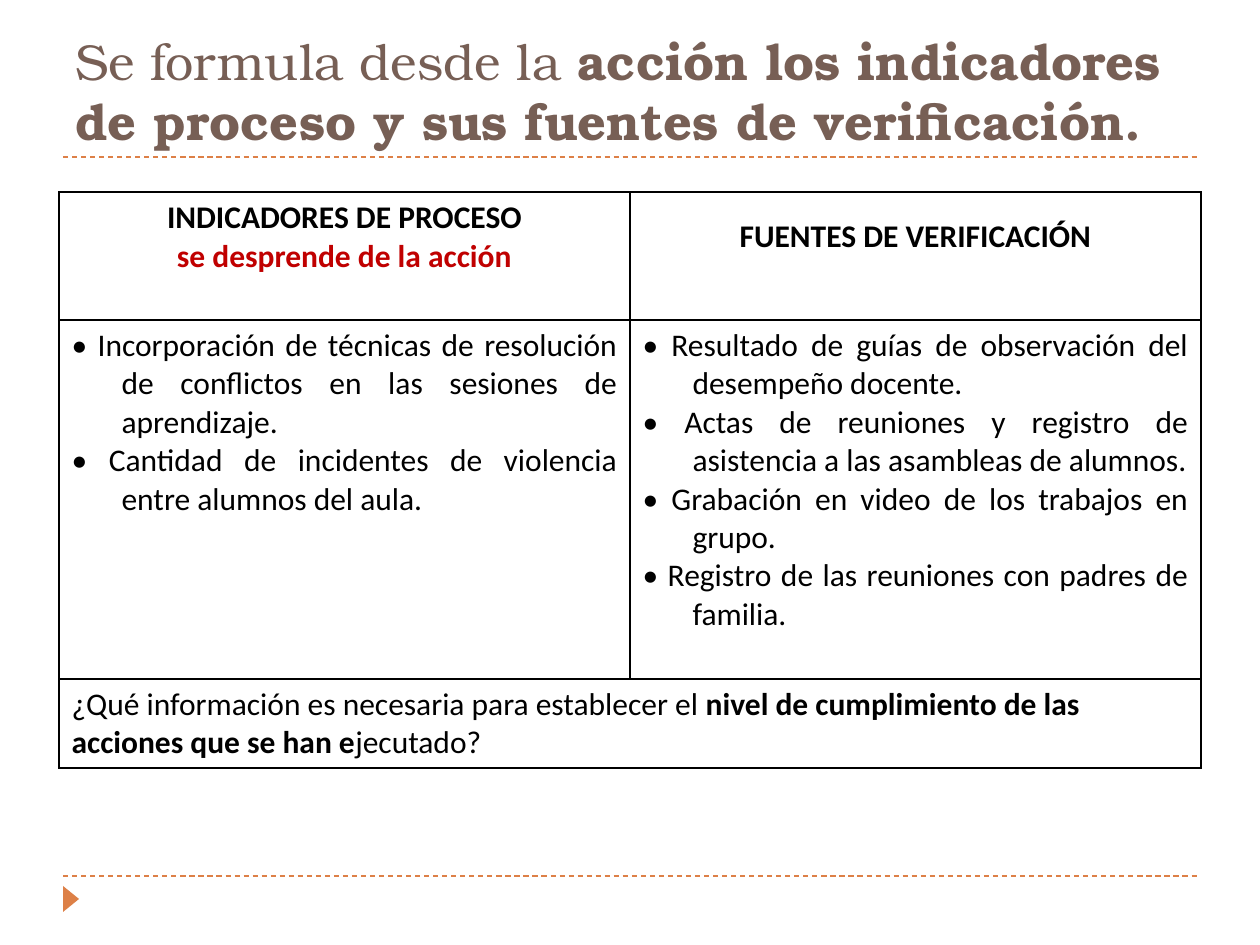
from dataclasses import dataclass

import pptx
import pptx.dml.color
import pptx.enum.dml
import pptx.enum.shapes
import pptx.enum.text
import pptx.oxml
import pptx.oxml.ns
import pptx.util
from lxml import etree

SCALE = 914400 / 126  # EMU in one px
ALIGN = pptx.enum.text.PP_ALIGN
ANCHOR = pptx.enum.text.MSO_ANCHOR
ACCENT, BROWN, BLACK, RED, WHITE = "DD8047", "775F55", "000000", "C00000", "FFFFFF"


@dataclass
class Run:
    text: str
    bold: bool = False


@dataclass
class Para:
    runs: list[Run]
    align: ALIGN = ALIGN.LEFT
    color: str = BLACK
    hang: int = 0
    font: str = "Calibri"
    size: float = 18


@dataclass
class Cell:
    row: int
    col: int
    paras: list[Para]
    anchor: ANCHOR = ANCHOR.TOP
    foot: int = 6


def px(n: int) -> pptx.util.Emu:
    return pptx.util.Emu(round(n * SCALE))


def rgb(code: str) -> pptx.dml.color.RGBColor:
    return pptx.dml.color.RGBColor.from_string(code)


def write(frame, paras: list[Para]) -> None:
    for i, para in enumerate(paras):
        p = frame.add_paragraph() if i else frame.paragraphs[0]
        p.alignment = para.align
        p.font.name, p.font.size = para.font, pptx.util.Pt(para.size)
        p.font.color.rgb = rgb(para.color)
        if para.hang:
            props = p._p.get_or_add_pPr()
            props.set("marL", str(px(para.hang)))
            props.set("indent", str(-px(para.hang)))
        for part in para.runs:
            run = p.add_run()
            run.text, run.font.bold = part.text, part.bold


def rule(slide, y: int) -> None:
    line = slide.shapes.add_connector(
        pptx.enum.shapes.MSO_CONNECTOR.STRAIGHT, px(63), px(y), px(1197), px(y))
    line.line.color.rgb = rgb(ACCENT)
    line.line.width = pptx.util.Pt(0.75)
    line.line.dash_style = pptx.enum.dml.MSO_LINE.DASH
    etree.SubElement(line._element.spPr, pptx.oxml.ns.qn("a:effectLst"))


def border(cell) -> None:
    props = cell._tc.get_or_add_tcPr()
    for side in "LRTB":
        props.append(pptx.oxml.parse_xml(
            f'<a:ln{side} {pptx.oxml.ns.nsdecls("a")} w="12700"><a:solidFill>'
            f'<a:srgbClr val="{BLACK}"/></a:solidFill></a:ln{side}>'))


def grid(slide, cols: list[int], rows: list[int], cells: list[Cell]) -> None:
    table = slide.shapes.add_table(
        len(rows), len(cols), px(59), px(192), px(sum(cols)), px(sum(rows))).table
    table.first_row = table.horz_banding = False
    for col, width in zip(table.columns, cols):
        col.width = px(width)
    for row, height in zip(table.rows, rows):
        row.height = px(height)
    for cell in table.iter_cells():
        border(cell)
        cell.fill.solid()
        cell.fill.fore_color.rgb = rgb(WHITE)
    last = len(rows) - 1
    table.cell(last, 0).merge(table.cell(last, len(cols) - 1))
    for item in cells:
        cell = table.cell(item.row, item.col)
        cell.vertical_anchor = item.anchor
        cell.margin_bottom = px(item.foot)
        write(cell.text_frame, item.paras)


def head(text: str, color: str = BLACK) -> Para:
    return Para([Run(text, True)], ALIGN.CENTER, color)


def points(*texts: str) -> list[Para]:
    return [Para([Run("• " + text)], ALIGN.JUSTIFY, hang=50) for text in texts]


CELLS = [
    Cell(0, 0, [head("INDICADORES DE PROCESO"),
                head("se desprende de la acción", RED)], ANCHOR.MIDDLE, 44),
    Cell(0, 1, [head("FUENTES DE VERIFICACIÓN")], ANCHOR.MIDDLE, 44),
    Cell(1, 0, points(
        "Incorporación de técnicas de resolución de conflictos en las sesiones de aprendizaje.",
        "Cantidad de incidentes de violencia entre alumnos del aula.")),
    Cell(1, 1, points(
        "Resultado de guías de observación del desempeño docente.",
        "Actas de reuniones y registro de asistencia a las asambleas de alumnos.",
        "Grabación en video de los trabajos en grupo.",
        "Registro de las reuniones con padres de familia.")),
    Cell(2, 0, [Para([
        Run("¿Qué información es necesaria para establecer el "),
        Run("nivel de cumplimiento de las acciones que se han e", True),
        Run("jecutado?")])]),
]


def main() -> None:
    deck = pptx.Presentation()
    deck.slide_width, deck.slide_height = px(1260), px(945)
    slide = deck.slides.add_slide(deck.slide_layouts[6])

    # Dashed rules and corner marker
    for y in (876, 157):
        rule(slide, y)
    mark = slide.shapes.add_shape(
        pptx.enum.shapes.MSO_SHAPE.ISOSCELES_TRIANGLE, px(58), px(891), px(26), px(16))
    mark.rotation = 90
    mark.shadow.inherit = False
    mark.fill.solid()
    mark.fill.fore_color.rgb = rgb(ACCENT)
    mark.line.fill.background()

    # Title
    frame = slide.shapes.add_textbox(px(63), px(31), px(1134), px(126)).text_frame
    frame.word_wrap = True
    frame.vertical_anchor = ANCHOR.BOTTOM
    write(frame, [Para([
        Run("Se formula desde la "),
        Run("acción los indicadores de proceso y sus fuentes de verificación.", True),
    ], color=BROWN, font="TeX Gyre Bonum", size=28.8)])

    # Indicators and sources
    grid(slide, [571, 571], [128, 359, 89], CELLS)
    deck.save("out.pptx")


if __name__ == "__main__":
    main()
